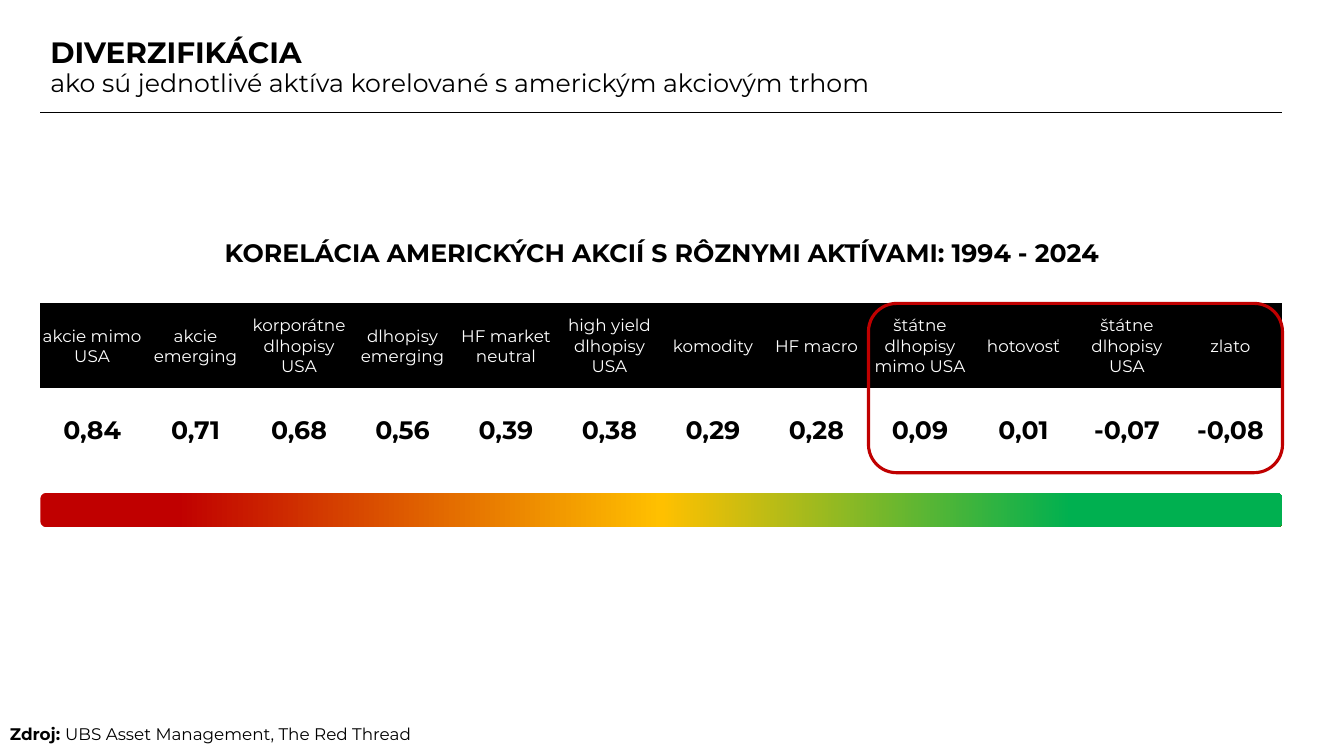
from copy import deepcopy

from lxml import etree
from pptx import Presentation
from pptx.dml import color
from pptx.enum import shapes, text
from pptx.oxml import ns
from pptx.util import Inches, Pt

FONT = "Montserrat"
COLOURS = {"black": "000000", "white": "FFFFFF", "red": "C00000",
           "amber": "FFC000", "green": "00B050"}
NO_STYLE = "{2D5ABB26-0587-4C30-8999-92F81FD0307C}"
LEFT, WIDTH = 0.4, 12.32
TABLE_TOP, ROW_HEIGHT = 3.01, 0.84
HIGHLIGHTED = 4
CORRELATIONS = [
    ("akcie mimo USA", "0,84"),
    ("akcie emerging", "0,71"),
    ("korporátne dlhopisy USA", "0,68"),
    ("dlhopisy emerging", "0,56"),
    ("HF market neutral", "0,39"),
    ("high yield dlhopisy USA", "0,38"),
    ("komodity", "0,29"),
    ("HF macro", "0,28"),
    ("štátne dlhopisy mimo USA", "0,09"),
    ("hotovosť", "0,01"),
    ("štátne dlhopisy USA", "-0,07"),
    ("zlato", "-0,08"),
]


def rgb(name):
    return color.RGBColor.from_string(COLOURS[name])


def style(font, size, bold=False, colour="black"):
    font.name = FONT
    font.size = Pt(size)
    font.bold = bold
    font.color.rgb = rgb(colour)


def add_text(page, place, paragraphs, align, spacing=1.0, anchor=text.MSO_ANCHOR.TOP):
    box = page.shapes.add_textbox(*map(Inches, place))
    frame = box.text_frame
    frame.word_wrap = True
    frame.vertical_anchor = anchor
    for index, spans in enumerate(paragraphs):
        para = frame.add_paragraph() if index else frame.paragraphs[0]
        para.alignment = align
        para.line_spacing = spacing
        for words, size, bold in spans:
            span = para.add_run()
            span.text = words
            style(span.font, size, bold)


def add_rule(page, top):
    rule = page.shapes.add_connector(
        shapes.MSO_CONNECTOR.STRAIGHT,
        Inches(LEFT), Inches(top), Inches(LEFT + WIDTH), Inches(top))
    rule.line.color.rgb = rgb("black")
    rule.line.width = Pt(0.5)
    etree.SubElement(rule._element.spPr, ns.qn("a:effectLst"))


def fill_cell(cell, words, size, bold, colour):
    cell.margin_left = cell.margin_right = cell.margin_top = Inches(0.01)
    cell.margin_bottom = 0
    cell.vertical_anchor = text.MSO_ANCHOR.MIDDLE
    cell.text_frame.text = words
    para = cell.text_frame.paragraphs[0]
    para.alignment = text.PP_ALIGN.CENTER
    style(para.runs[0].font, size, bold, colour)


def add_correlation_table(page):
    place = (LEFT, TABLE_TOP, WIDTH, 2 * ROW_HEIGHT)
    table = page.shapes.add_table(2, len(CORRELATIONS), *map(Inches, place)).table
    table.first_row = table.horz_banding = False
    table._tbl.tblPr.find(ns.qn("a:tableStyleId")).text = NO_STYLE
    for column, (asset, value) in enumerate(CORRELATIONS):
        heading, figure = table.cell(0, column), table.cell(1, column)
        fill_cell(heading, asset, 12, False, "white")
        heading.fill.solid()
        heading.fill.fore_color.rgb = rgb("black")
        fill_cell(figure, value, 18, True, "black")
        figure.fill.background()


def add_rounded(page, place):
    shape = page.shapes.add_shape(
        shapes.MSO_SHAPE.ROUNDED_RECTANGLE, *map(Inches, place))
    shape.shadow.inherit = False
    return shape


def add_highlight(page):
    width = WIDTH * HIGHLIGHTED / len(CORRELATIONS)
    frame = add_rounded(
        page, (LEFT + WIDTH - width, TABLE_TOP, width, 2 * ROW_HEIGHT))
    frame.fill.background()
    frame.line.color.rgb = rgb("red")
    frame.line.width = Pt(2.25)


def add_scale(page, stops):
    bar = add_rounded(page, (LEFT, 4.89, WIDTH, 0.34))
    bar.line.fill.background()
    bar.fill.gradient()
    bar.fill.gradient_angle = 0
    stop_list = bar._element.spPr.find(".//" + ns.qn("a:gsLst"))
    stop_list.append(deepcopy(stop_list[-1]))
    for stop, (position, colour) in zip(bar.fill.gradient_stops, stops):
        stop.position = position
        stop.color.rgb = rgb(colour)


def main():
    deck = Presentation()
    deck.slide_width, deck.slide_height = Inches(13.33), Inches(7.5)
    page = deck.slides.add_slide(deck.slide_layouts[6])
    add_text(page, (LEFT, 0.31, WIDTH, 0.73),
             [[("DIVERZIFIKÁCIA", 21, True)],
              [("ako sú jednotlivé aktíva korelované s americkým akciovým trhom",
                18, False)]],
             text.PP_ALIGN.LEFT, 0.9, text.MSO_ANCHOR.MIDDLE)
    add_rule(page, 1.11)
    add_text(page, (0, 7.13, 8.62, 0.3),
             [[("Zdroj: ", 12, True),
               ("UBS Asset Management, The Red Thread", 12, False)]],
             text.PP_ALIGN.JUSTIFY)
    add_correlation_table(page)
    add_highlight(page)
    add_scale(page, [(0.11, "red"), (0.5, "amber"), (0.83, "green")])
    add_text(page, (2.13, 2.31, 9.08, 0.4),
             [[("KORELÁCIA AMERICKÝCH AKCIÍ S RÔZNYMI AKTÍVAMI: 1994 - 2024",
                18, True)]],
             text.PP_ALIGN.JUSTIFY)
    deck.save("out.pptx")


if __name__ == "__main__":
    main()
